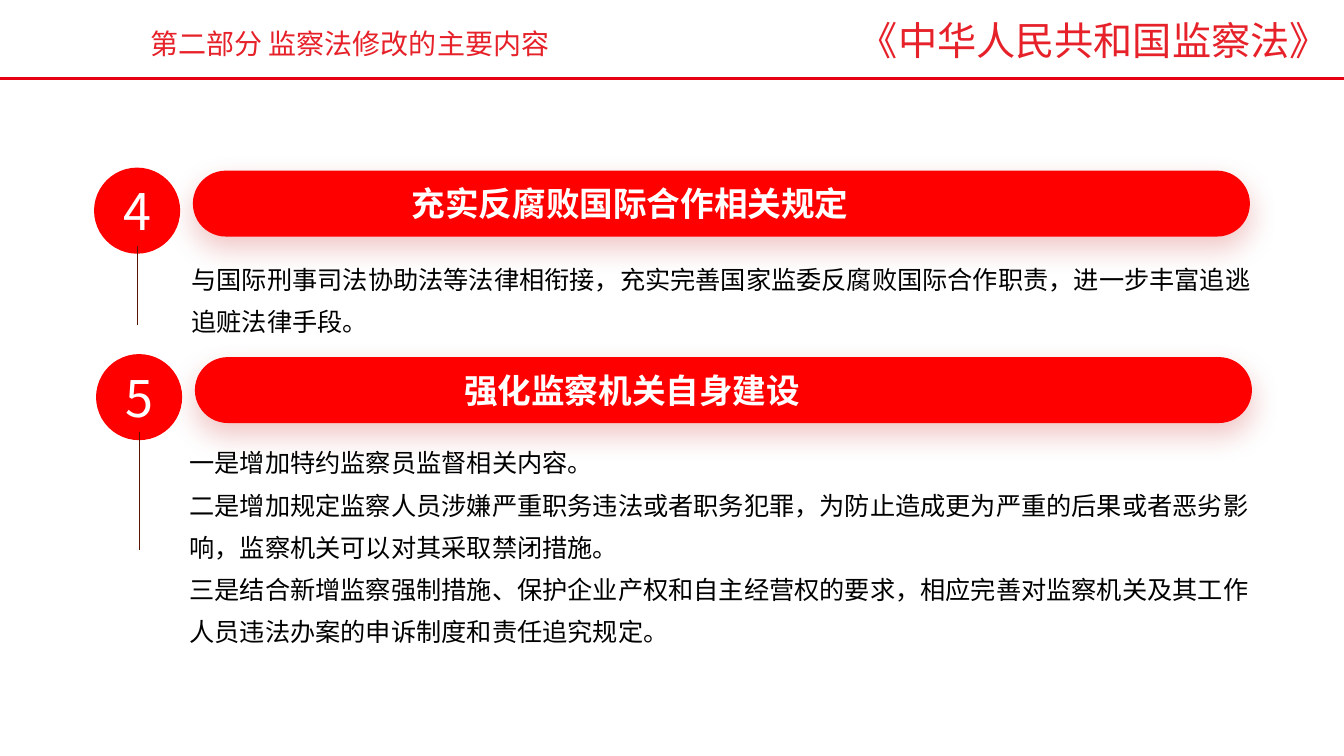
from lxml.etree import SubElement
from pptx import Presentation
from pptx.dml.color import RGBColor
from pptx.enum.shapes import MSO_CONNECTOR, MSO_SHAPE
from pptx.enum.text import MSO_ANCHOR, MSO_AUTO_SIZE, PP_ALIGN
from pptx.oxml.ns import qn
from pptx.util import Inches, Pt


def color(hex_string):
    return RGBColor.from_string(hex_string)


class SlideBuilder:
    font_name = "Noto Sans CJK SC"
    header_red = "E62129"
    rule_red = "E50012"
    fill_red = "FF0000"
    shadow_red = "C30F0F"
    stem_brown = "591300"
    white = "FFFFFF"
    black = "000000"

    def __init__(self, slide):
        self.slide = slide

    def fill_text(self, shape, lines, size, hex_string, bold=False, align=PP_ALIGN.LEFT,
                  spacing=1.0, anchor=MSO_ANCHOR.TOP, wrap=True):
        frame = shape.text_frame
        frame.word_wrap = wrap
        frame.auto_size = MSO_AUTO_SIZE.NONE
        frame.vertical_anchor = anchor
        for index, line in enumerate(lines):
            paragraph = frame.add_paragraph() if index else frame.paragraphs[0]
            paragraph.alignment = align
            paragraph.line_spacing = spacing
            paragraph.space_before = Pt(0)
            if shape.is_placeholder:
                properties = paragraph._p.get_or_add_pPr()
                properties.set("marL", "0")
                properties.set("indent", "0")
                SubElement(properties, qn("a:buNone"))
            run = paragraph.add_run()
            run.text = line
            run.font.name = self.font_name
            run.font.size = Pt(size)
            run.font.bold = bold
            run.font.color.rgb = color(hex_string)
            east_asian = SubElement(run._r.get_or_add_rPr(), qn("a:ea"))
            east_asian.set("typeface", self.font_name)

    def placeholder(self, index, box, lines, size, hex_string, **style):
        shape = self.slide.placeholders[index]
        shape.left, shape.top, shape.width, shape.height = map(Inches, box)
        self.fill_text(shape, lines, size, hex_string, **style)

    def text(self, box, line, size, hex_string, **style):
        shape = self.slide.shapes.add_textbox(*map(Inches, box))
        self.fill_text(shape, [line], size, hex_string, **style)

    def red_shape(self, kind, box):
        shape = self.slide.shapes.add_shape(kind, *map(Inches, box))
        shape.shadow.inherit = False
        shape.fill.solid()
        shape.fill.fore_color.rgb = color(self.fill_red)
        shape.line.color.rgb = color(self.fill_red)
        shape.line.width = Pt(1)
        return shape

    def pill(self, box):
        shape = self.red_shape(MSO_SHAPE.ROUNDED_RECTANGLE, box)
        shape.adjustments[0] = 0.5
        # Soft shadow straight below the pill
        effects = shape._element.spPr.find(qn("a:effectLst"))
        shadow = SubElement(effects, qn("a:outerShdw"), blurRad=str(Pt(20)),
                            dist=str(Pt(8)), dir="5400000", algn="t", rotWithShape="0")
        shadow_color = SubElement(shadow, qn("a:srgbClr"), val=self.shadow_red)
        SubElement(shadow_color, qn("a:alpha"), val="23000")

    def circle(self, box, number):
        shape = self.red_shape(MSO_SHAPE.OVAL, box)
        self.fill_text(shape, [number], 36, self.white, align=PP_ALIGN.CENTER,
                       anchor=MSO_ANCHOR.MIDDLE)

    def line(self, start, end, hex_string, width):
        connector = self.slide.shapes.add_connector(
            MSO_CONNECTOR.STRAIGHT, *map(Inches, (*start, *end)))
        connector.line.color.rgb = color(hex_string)
        connector.line.width = Pt(width)
        SubElement(connector._element.spPr, qn("a:effectLst"))

    def section(self, left, top, number, heading, stem_end):
        self.pill((left + 0.98, top + 0.03, 10.47, 0.64))
        self.text((left + 1.34, top + 0.06, 7.94, 0.53), heading, 24, self.white,
                  bold=True, align=PP_ALIGN.CENTER, spacing=1.1)
        self.circle((left, top, 0.84, 0.84), number)
        self.line((left + 0.42, top + 0.77), (left + 0.42, stem_end), self.stem_brown, 0.75)


def main():
    presentation = Presentation()
    presentation.slide_width = Inches(13.33)
    presentation.slide_height = Inches(7.5)
    # Two Content layout: a title and two body placeholders
    slide = presentation.slides.add_slide(presentation.slide_layouts[3])
    for shape in list(slide.placeholders):
        if shape.placeholder_format.idx > 2:
            shape._element.getparent().remove(shape._element)
    builder = SlideBuilder(slide)

    # Header
    builder.placeholder(0, (1.39, 0.21, 4.21, 0.44), ["第二部分 监察法修改的主要内容"],
                        20, builder.header_red, wrap=False)
    builder.text((8.42, 0.11, 4.91, 0.57), "《中华人民共和国监察法》",
                 28, builder.header_red, wrap=False)
    builder.line((0, 0.78), (13.33, 0.78), builder.rule_red, 2.25)

    # Numbered headings
    builder.section(0.94, 1.67, "4", "充实反腐败国际合作相关规定", 3.22)
    builder.section(0.96, 3.52, "5", "强化监察机关自身建设", 5.46)

    # Explanations
    builder.placeholder(1, (1.8, 2.45, 10.75, 0.91), [
        "与国际刑事司法协助法等法律相衔接，充实完善国家监委反腐败国际合作职责，进一步丰富追逃追赃法律手段。",
    ], 18, builder.black, spacing=1.4)
    builder.placeholder(2, (1.78, 4.27, 10.75, 2.18), [
        "一是增加特约监察员监督相关内容。",
        "二是增加规定监察人员涉嫌严重职务违法或者职务犯罪，为防止造成更为严重的后果或者恶劣影响，监察机关可以对其采取禁闭措施。",
        "三是结合新增监察强制措施、保护企业产权和自主经营权的要求，相应完善对监察机关及其工作人员违法办案的申诉制度和责任追究规定。",
    ], 18, builder.black, spacing=1.4)

    presentation.save("out.pptx")


if __name__ == "__main__":
    main()
